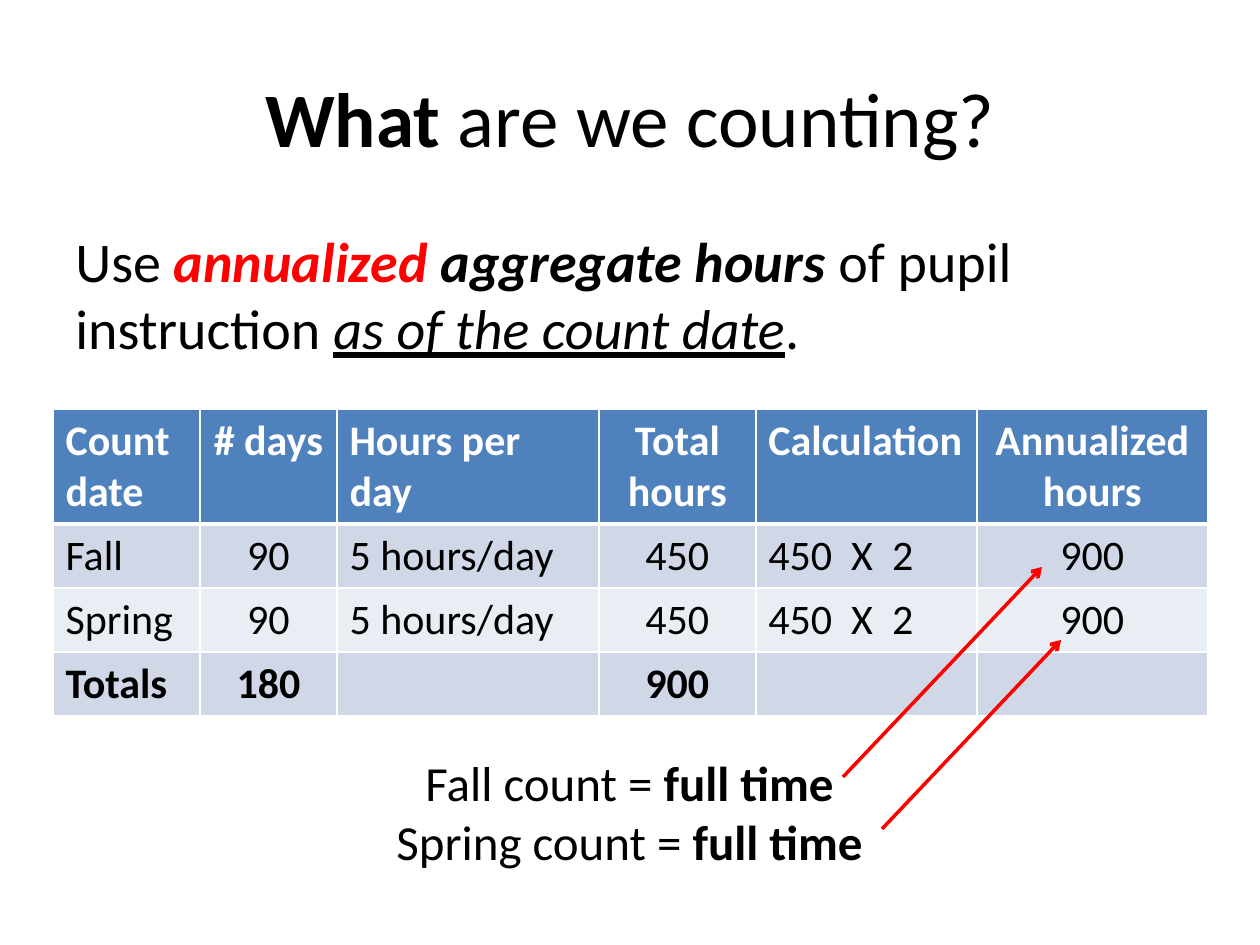
from dataclasses import dataclass

from lxml.etree import SubElement
from pptx import Presentation
from pptx.dml.color import RGBColor
from pptx.enum.shapes import MSO_CONNECTOR
from pptx.enum.text import MSO_ANCHOR, PP_ALIGN
from pptx.oxml.ns import qn
from pptx.util import Emu, Pt


@dataclass(frozen=True)
class Theme:
    font: str = "Calibri"
    black: str = "000000"
    white: str = "FFFFFF"
    red: str = "FF0000"
    header: str = "4F81BD"
    band_dark: str = "D0D8E8"
    band_light: str = "E9EDF4"
    title_size: int = 44
    body_size: int = 32
    note_size: int = 28
    table_size: int = 24


THEME = Theme()
PX_PER_INCH = 126

COLUMN_WIDTHS = (147, 137, 262, 157, 221, 231)
HEADER_HEIGHT, ROW_HEIGHT = 115, 64
CENTERED_COLUMNS = {1, 3, 5}
ROWS = (
    ("Count date", "# days", "Hours per day", "Total hours", "Calculation", "Annualized hours"),
    ("Fall", "90", "5 hours/day", "450", "450  X  2", "900"),
    ("Spring", "90", "5 hours/day", "450", "450  X  2", "900"),
    ("Totals", "180", "", "900", "", ""),
)


def px(length):
    return Emu(round(length * 914400 / PX_PER_INCH))


def box(*lengths):
    return [px(length) for length in lengths]


def add_run(paragraph, text, size, color=THEME.black, bold=False, italic=False, underline=False):
    run = paragraph.add_run()
    run.text = text
    font = run.font
    font.name, font.size = THEME.font, Pt(size)
    font.bold, font.italic, font.underline = bold, italic, underline
    font.color.rgb = RGBColor.from_string(color)


def set_title(slide):
    title = slide.shapes.title
    title.left, title.top, title.width, title.height = box(63, 38, 1134, 157)
    title.text_frame.vertical_anchor = MSO_ANCHOR.MIDDLE
    paragraph = title.text_frame.paragraphs[0]
    paragraph.alignment = PP_ALIGN.CENTER
    add_run(paragraph, "What", THEME.title_size, bold=True)
    add_run(paragraph, " are we counting?", THEME.title_size)


def add_text(slide, bounds, size, lines, alignment=PP_ALIGN.LEFT, space_before=0):
    """Each line is a list of (text, run formats) pairs."""
    frame = slide.shapes.add_textbox(*box(*bounds)).text_frame
    frame.word_wrap = True
    for index, line in enumerate(lines):
        paragraph = frame.add_paragraph() if index else frame.paragraphs[0]
        paragraph.alignment = alignment
        paragraph.space_before = Pt(space_before)
        for text, formats in line:
            add_run(paragraph, text, size, **formats)


def add_borders(cell, widths):
    properties = cell._tc.get_or_add_tcPr()
    for side, width in widths.items():
        line = SubElement(properties, qn(f"a:ln{side}"), w=str(Pt(width)))
        fill = SubElement(line, qn("a:solidFill"))
        SubElement(fill, qn("a:srgbClr"), val=THEME.white)


def format_cell(cell, text, row, column):
    is_header = row == 0
    # Borders come before the fill in the cell properties
    add_borders(cell, {"L": 1, "R": 1, "T": 3 if row == 1 else 1, "B": 3 if is_header else 1})
    fill = THEME.header if is_header else (THEME.band_light, THEME.band_dark)[row % 2]
    cell.fill.solid()
    cell.fill.fore_color.rgb = RGBColor.from_string(fill)
    paragraph = cell.text_frame.paragraphs[0]
    paragraph.font.size = Pt(THEME.table_size)
    paragraph.alignment = PP_ALIGN.CENTER if column in CENTERED_COLUMNS else PP_ALIGN.LEFT
    if text:
        add_run(paragraph, text, THEME.table_size,
                color=THEME.white if is_header else THEME.black,
                bold=is_header or row == len(ROWS) - 1)


def add_hours_table(slide):
    height = HEADER_HEIGHT + ROW_HEIGHT * (len(ROWS) - 1)
    bounds = box(53, 409, sum(COLUMN_WIDTHS), height)
    table = slide.shapes.add_table(len(ROWS), len(COLUMN_WIDTHS), *bounds).table
    for column, width in zip(table.columns, COLUMN_WIDTHS):
        column.width = px(width)
    for row_index, texts in enumerate(ROWS):
        table.rows[row_index].height = px(ROW_HEIGHT if row_index else HEADER_HEIGHT)
        for column_index, text in enumerate(texts):
            format_cell(table.cell(row_index, column_index), text, row_index, column_index)


def add_arrow(slide, start, end):
    arrow = slide.shapes.add_connector(MSO_CONNECTOR.STRAIGHT, *box(*start, *end))
    arrow.line.color.rgb = RGBColor.from_string(THEME.red)
    arrow.line.width = Pt(2)
    SubElement(arrow.line._get_or_add_ln(), qn("a:tailEnd"), type="arrow")
    SubElement(arrow._element.spPr, qn("a:effectLst"))


def main():
    presentation = Presentation()
    presentation.slide_width, presentation.slide_height = box(1260, 945)
    slide = presentation.slides.add_slide(presentation.slide_layouts[5])

    set_title(slide)

    # Counting rule
    emphasis = {"bold": True, "italic": True}
    add_text(slide, (63, 220, 1134, 158), THEME.body_size, [[
        ("Use ", {}),
        ("annualized", {**emphasis, "color": THEME.red}),
        (" aggregate hours ", emphasis),
        ("of pupil instruction ", {}),
        ("as of the count date", {"italic": True, "underline": True}),
        (".", {}),
    ]], space_before=6.4)

    add_hours_table(slide)

    # Result for each count, with arrows to its annualized hours
    add_text(slide, (346, 746, 567, 131), THEME.note_size, [
        [(f"{season} count = ", {}), ("full time", {"bold": True})]
        for season in ("Fall", "Spring")
    ], alignment=PP_ALIGN.CENTER)
    add_arrow(slide, (843, 777), (1042, 567))
    add_arrow(slide, (882, 829), (1061, 640))

    presentation.save("out.pptx")


if __name__ == "__main__":
    main()
